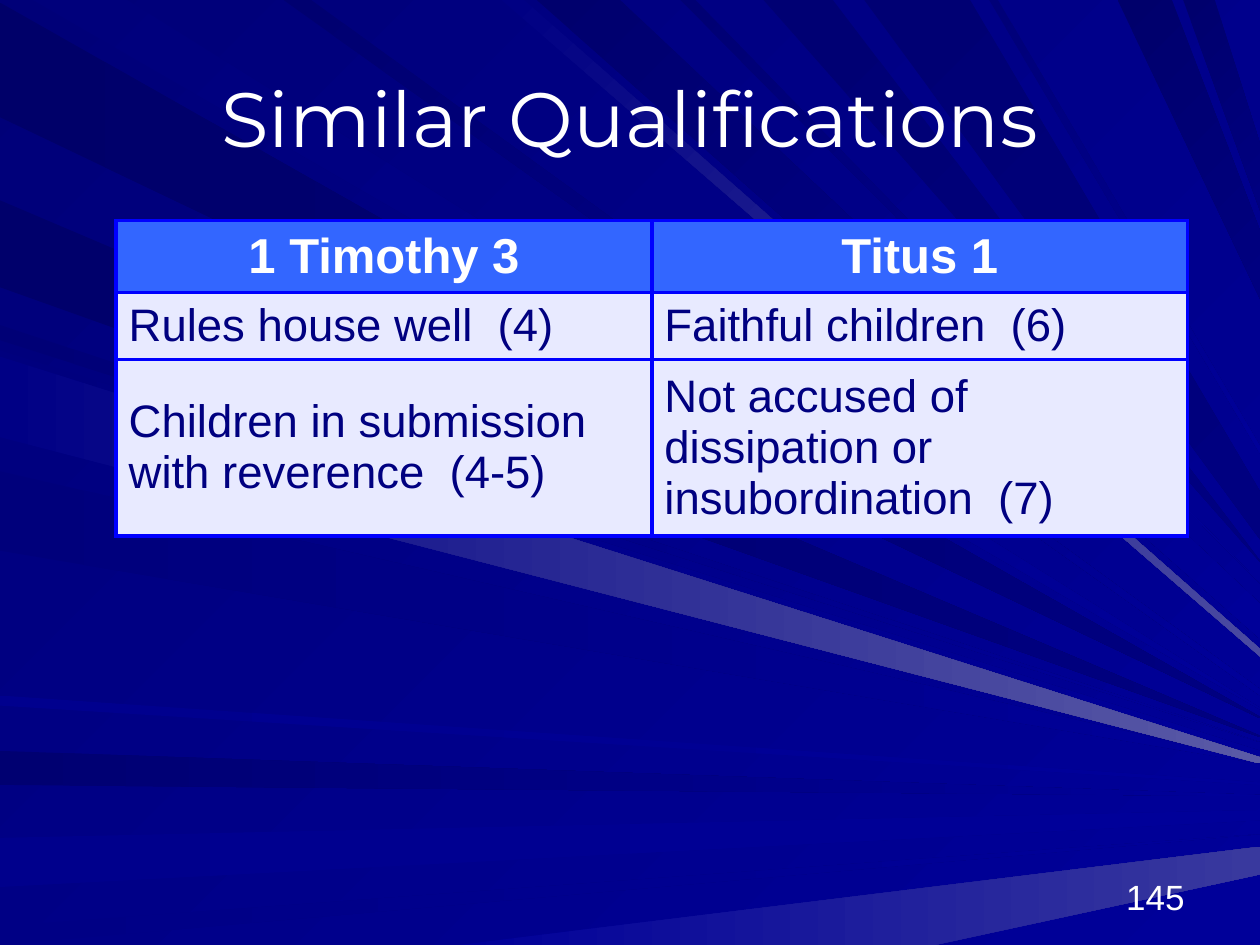
"""Build the Similar Qualifications slide: ray background, title, table and page number."""
from lxml import etree
from pptx import Presentation
from pptx.dml.color import RGBColor
from pptx.enum.text import MSO_ANCHOR, PP_ALIGN
from pptx.oxml.ns import qn
from pptx.util import Cm, Pt

MIDDLE, BOTTOM = MSO_ANCHOR.MIDDLE, MSO_ANCHOR.BOTTOM
LEFT, CENTER, RIGHT = PP_ALIGN.LEFT, PP_ALIGN.CENTER, PP_ALIGN.RIGHT
GRID = Cm(0.0254)
RIGHT_EDGE, BOTTOM_EDGE = 1000, 750
WHITE, NAVY, BLUE, BRIGHT = "FFFFFF", "000080", "000099", "0000FF"


def color(value):
    return RGBColor.from_string(value)


def paint(fill, start, end, angle):
    fill.gradient()
    fill.gradient_angle = (360 - angle) % 360
    for stop, value in zip(fill.gradient_stops, (start, end)):
        stop.color.rgb = color(value)


deck = Presentation()
deck.slide_width, deck.slide_height = Cm(25.4), Cm(19.05)
page = deck.slides.add_slide(deck.slide_layouts[6])
paint(page.background.fill, "000078", BLUE, 45)

rays = [
    ("left", 2, 93, 570, 569, "000069", NAVY),
    ("top", 101, 26, 563, 562, "00007B", BLUE),
    ("left", 596, 623, 632, 631, "000071", BLUE),
    ("left", 665, 704, 651, 643, "00008C", BLUE),
    ("left", 735, 750, 662, 662, "000085", BLUE),
    ("bottom", 364, 742, 694, 672, BLUE, "39399E"),
    ("left", 258, 270, 589, 589, "000076", BLUE),
    ("left", 159, 228, 585, 584, "00006B", NAVY),
    ("top", 416, 398, 521, 515, "000083", "4A4AA1"),
    ("top", 492, 426, 507, 479, "00006D", BLUE),
    ("top", 552, 540, 463, 463, "000073", BLUE),
    ("top", 661, 606, 446, 445, "000073", NAVY),
    ("top", 930, 887, 237, 183, "00006B", NAVY),
    ("top", 964, 939, 167, 114, "00006D", NAVY),
    ("left", 278, 342, 602, 596, "00007E", BLUE),
    ("left", 374, 437, 606, 605, "00007B", BLUE),
    ("left", 552, 560, 623, 621, "00008E", BLUE),
    ("top", 247, 225, 552, 547, "000070", BLUE),
    ("top", 770, 686, 428, 390, "000073", NAVY),
    ("top", 792, 785, 360, 354, "000078", BLUE),
    ("left", 283, 347, 606, 601, "000085", "5A5AA6"),
]
for edge, first, last, low, high, start, end in rays:
    if edge == "left":
        base = [(0, first), (0, last)]
    else:
        base_y = 0 if edge == "top" else BOTTOM_EDGE
        base = [(first, base_y), (last, base_y)]
    outline = page.shapes.build_freeform(*base[0], scale=GRID)
    outline.add_line_segments([base[1], (RIGHT_EDGE, low), (RIGHT_EDGE, high)], close=True)
    ray = outline.convert_to_shape()
    ray.shadow.inherit = False
    ray.line.fill.background()
    paint(ray.fill, start, end, 45 if edge == "top" else 0)

labels = [
    ("Similar Qualifications", (1.27, 0.76, 22.86, 3.18), "Montserrat", 44, CENTER, MIDDLE),
    ("145", (18.21, 17.35, 5.92, 1.27), "Arial", 20, RIGHT, BOTTOM),
]
for text, place, font_name, size, align, anchor in labels:
    box = page.shapes.add_textbox(*map(Cm, place))
    frame = box.text_frame
    frame.text = text
    frame.word_wrap = True
    frame.vertical_anchor = anchor
    para = frame.paragraphs[0]
    para.alignment = align
    span = para.runs[0]
    span.font.name, span.font.size = font_name, Pt(size)
    span.font.color.rgb = color(WHITE)

rows = [
    ("1 Timothy 3", "Titus 1"),
    ("Rules house well  (4)", "Faithful children  (6)"),
    ("Children in submission with reverence  (4-5)",
     "Not accused of dissipation or insubordination  (7)"),
]
table = page.shapes.add_table(3, 2, Cm(2.34), Cm(4.45), Cm(21.6), Cm(3.12)).table
for row_index, texts in enumerate(rows):
    header = row_index == 0
    table.rows[row_index].height = Cm(1.04)
    for column_index, text in enumerate(texts):
        cell = table.cell(row_index, column_index)
        cell.text_frame.text = text
        cell.vertical_anchor = MIDDLE
        properties = cell._tc.get_or_add_tcPr()
        for side in ("a:lnL", "a:lnR", "a:lnT", "a:lnB"):
            border = etree.SubElement(properties, qn(side), w=str(Pt(2.25)))
            solid = etree.SubElement(border, qn("a:solidFill"))
            etree.SubElement(solid, qn("a:srgbClr"), val=BRIGHT)
        cell.fill.solid()
        cell.fill.fore_color.rgb = color("3366FF" if header else "E8EAFF")
        para = cell.text_frame.paragraphs[0]
        para.alignment = CENTER if header else LEFT
        span = para.runs[0]
        span.font.name, span.font.size = "Arial", Pt(28 if header else 26)
        span.font.bold = header
        span.font.color.rgb = color(WHITE if header else NAVY)

deck.save("out.pptx")
